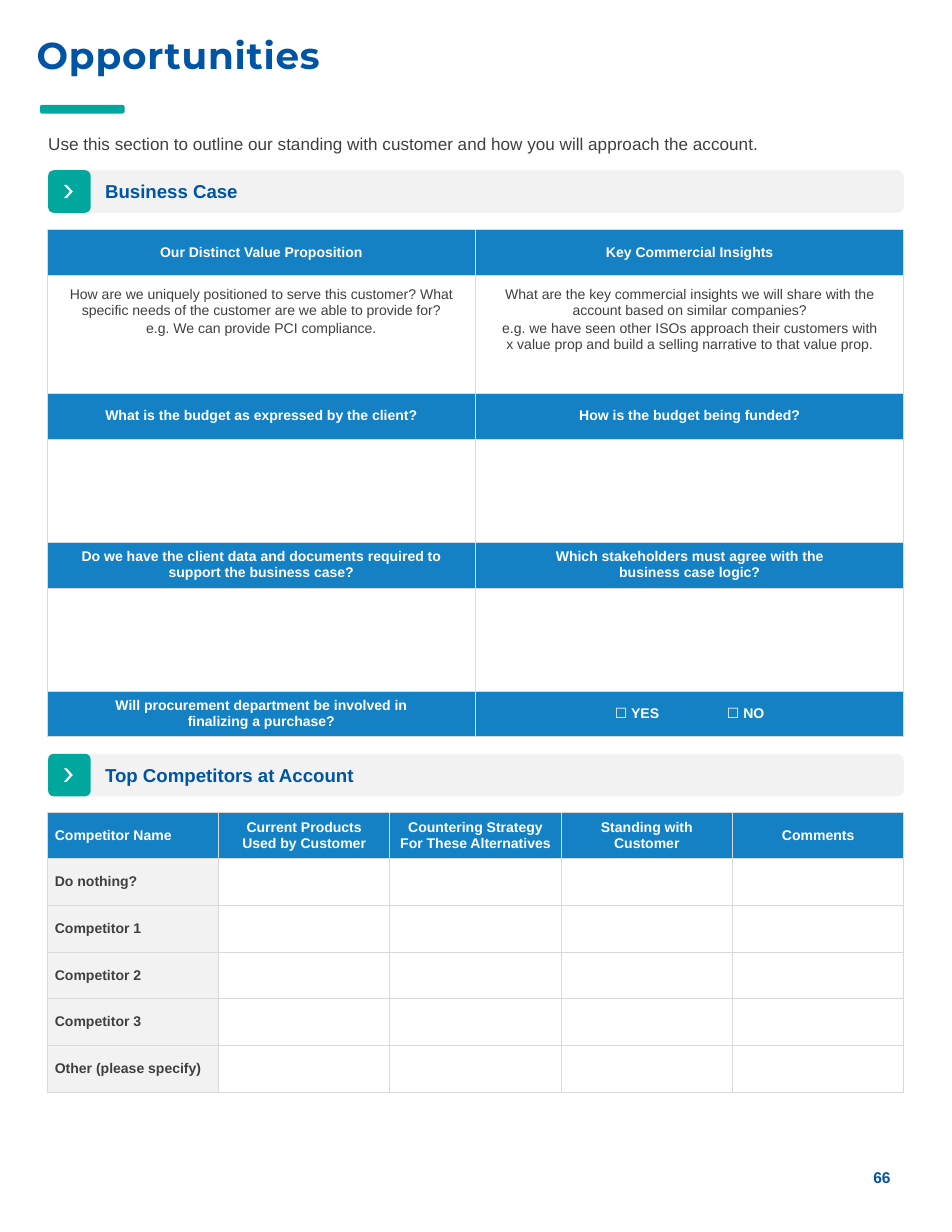
from lxml import etree
from pptx import Presentation
from pptx.dml.color import RGBColor
from pptx.enum.shapes import MSO_SHAPE as SHAPE
from pptx.enum.text import MSO_ANCHOR as ANCHOR, PP_ALIGN as ALIGN
from pptx.oxml import parse_xml
from pptx.oxml.ns import nsdecls
from pptx.util import Inches, Pt

COLORS = {"navy": "0054A4", "teal": "00A79D", "blue": "1481C4", "ink": "3F3F3F",
          "pale": "F2F2F2", "rule": "D9D9D9", "white": "FFFFFF"}
LEFT, WIDTH = 0.42, 7.65

prs = Presentation()
prs.slide_width, prs.slide_height = Inches(8.5), Inches(11)
slide = prs.slides.add_slide(prs.slide_layouts[6])
shapes = slide.shapes


def write(frame, text, size, color, bold=False, align=ALIGN.LEFT, font="Arial",
          margins=(0.1, 0.05, 0.1, 0.05), before=0, after=0):
    """Newlines part paragraphs; vertical tabs break lines."""
    sides = ("margin_left", "margin_top", "margin_right", "margin_bottom")
    for side, value in zip(sides, margins):
        setattr(frame, side, Inches(value))
    frame.word_wrap = True
    frame.text = text
    for number, paragraph in enumerate(frame.paragraphs):
        paragraph.alignment = align
        paragraph.space_before = Pt(before if number else 0)
        paragraph.space_after = Pt(after)
        look = {"size": Pt(size), "bold": bold, "name": font}
        for run in paragraph.runs:
            for key, value in look.items():
                setattr(run.font, key, value)
            run.font.color.rgb = RGBColor.from_string(COLORS[color])


def block(kind, left, top, width, height, color, round_by=None):
    shape = shapes.add_shape(kind, *map(Inches, (left, top, width, height)))
    shape.shadow.inherit = False
    shape.fill.solid()
    shape.fill.fore_color.rgb = RGBColor.from_string(COLORS[color])
    shape.line.fill.background()
    if round_by is not None:
        shape.adjustments[0] = round_by
    return shape


# Title, accent bar, introduction and page number
accent = block(SHAPE.ROUNDED_RECTANGLE, 0.37, 0.95, 0.73, 0.05, "teal")
accent.line.color.rgb = RGBColor.from_string(COLORS["teal"])
accent.line.width = Pt(2)

labels = [
    ((0.23, 0, 8.27, 0.98), "Opportunities",
     {"size": 24, "color": "navy", "bold": True, "font": "Montserrat"}),
    ((7.67, 10.27, 0.41, 0.48), "66",
     {"size": 10, "color": "navy", "bold": True, "align": ALIGN.CENTER}),
    ((0.43, 1.19, WIDTH, 0.19),
     "Use this section to outline our standing with customer and how you will "
     "approach the account.",
     {"size": 11, "color": "ink", "margins": (0, 0, 0, 0), "after": 6}),
]
for place, words, style in labels:
    label = shapes.add_textbox(*map(Inches, place))
    write(label.text_frame, words, **style)
    label.text_frame.vertical_anchor = ANCHOR.MIDDLE
    if style["size"] == 24:
        label.text_frame.paragraphs[0].runs[0].font._element.set("spc", "50")

# Section headings
for top, heading in [(1.52, "Business Case"), (6.73, "Top Competitors at Account")]:
    band = block(SHAPE.ROUNDED_RECTANGLE, LEFT, top, WIDTH, 0.38, "pale", 0.165)
    write(band.text_frame, heading, 12, "navy", True, margins=(0.5, 0, 0.1, 0), after=6)
    band.text_frame.vertical_anchor = ANCHOR.MIDDLE
    block(SHAPE.ROUNDED_RECTANGLE, 0.43, top, 0.38, 0.38, "teal", 0.132)
    block(SHAPE.CHEVRON, 0.57, top + 0.13, 0.08, 0.12, "white", 0.672)

# Table contents
business_case = [
    ["Our Distinct Value Proposition", "Key Commercial Insights"],
    ["How are we uniquely positioned to serve this customer? What specific needs of "
     "the customer are we able to provide for?\n"
     "e.g. We can provide PCI compliance.",
     "What are the key commercial insights we will share with the account based on "
     "similar companies?\n"
     "e.g. we have seen other ISOs approach their customers with x value prop and "
     "build a selling narrative to that value prop."],
    ["What is the budget as expressed by the client?", "How is the budget being funded?"],
    ["", ""],
    ["Do we have the client data and documents required to support the business case?",
     "Which stakeholders must agree with the\vbusiness case logic?"],
    ["", ""],
    ["Will procurement department be involved in\vfinalizing a purchase?",
     "☐ YES \t\t☐ NO"],
]
competitors = [["Competitor Name", "Current Products\vUsed by Customer",
                "Countering Strategy For These Alternatives",
                "Standing with Customer", "Comments"]]
for name in ("Do nothing?", "Competitor 1", "Competitor 2", "Competitor 3",
             "Other (please specify)"):
    competitors.append([name] + [""] * 4)

# Tables: top, contents, row heights, header rows, side margin, named first column
tables = [
    (2.05, business_case, [0.41, 1.05, 0.41, 0.92, 0.41, 0.92, 0.41], (0, 2, 4, 6), 0.2, False),
    (7.25, competitors, [2.5 / 6] * 6, (0,), 0.07, True),
]
for top, contents, heights, headers, side, named in tables:
    columns = len(contents[0])
    table = shapes.add_table(len(contents), columns, Inches(LEFT), Inches(top),
                             Inches(WIDTH), Inches(sum(heights))).table
    table.first_row = table.horz_banding = False
    for column in table.columns:
        column.width = Inches(WIDTH / columns)
    for r, (height, texts) in enumerate(zip(heights, contents)):
        table.rows[r].height = Inches(height)
        for c, words in enumerate(texts):
            cell = table.cell(r, c)
            is_header, is_name = r in headers, named and c == 0
            is_answer = not is_header and not is_name
            write(cell.text_frame, words, 9, "white" if is_header else "ink",
                  bold=not is_answer, align=ALIGN.LEFT if is_name else ALIGN.CENTER, before=2)
            cell.margin_left = cell.margin_right = Inches(side)
            cell.margin_top = Inches(0.1 if is_answer and words else 0)
            cell.margin_bottom = 0
            cell.vertical_anchor = ANCHOR.TOP if is_answer else ANCHOR.MIDDLE
            properties = cell._tc.get_or_add_tcPr()
            for edge in ("lnL", "lnR", "lnT", "lnB"):
                properties.append(parse_xml(
                    f'<a:{edge} {nsdecls("a")} w="6350"><a:solidFill>'
                    f'<a:srgbClr val="{COLORS["rule"]}"/></a:solidFill></a:{edge}>'))
            cell.fill.solid()
            fill = "blue" if is_header else "pale" if is_name else "white"
            cell.fill.fore_color.rgb = RGBColor.from_string(COLORS[fill])

prs.save("out.pptx")
